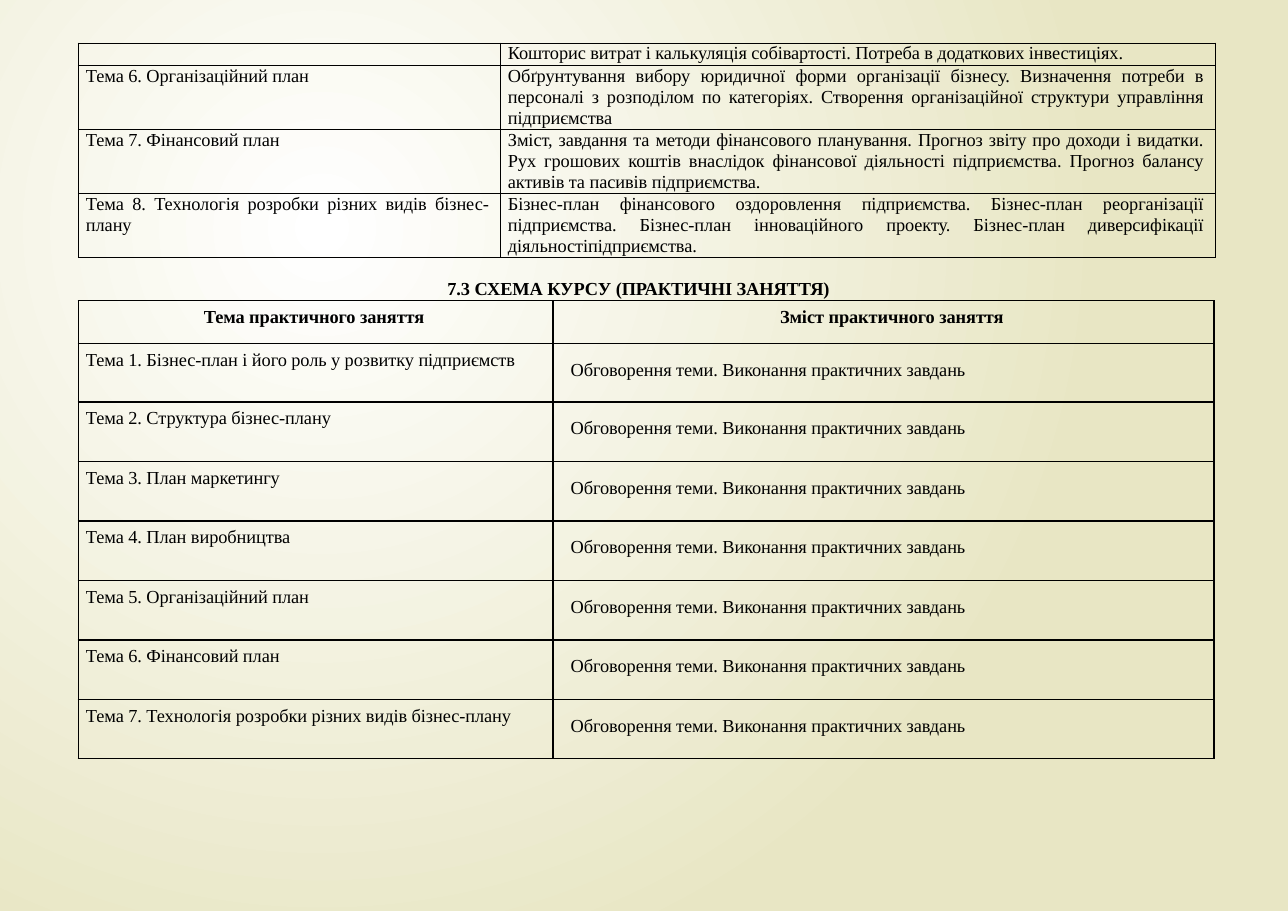
from lxml.etree import SubElement
from pptx import Presentation
from pptx.dml.color import RGBColor
from pptx.enum.text import MSO_ANCHOR, PP_ALIGN as Align
from pptx.oxml import parse_xml
from pptx.oxml.ns import nsdecls, qn
from pptx.util import Inches, Pt

COLORS = {"ink": "000000", "glow": "FFFFFF", "sand": "E8E6C4"}
FONT = {"name": "Times New Roman", "size": Pt(12)}
TRACKING = "-5"

LECTURES = [
    ("", "Кошторис витрат і калькуляція собівартості. Потреба в додаткових інвестиціях."),
    ("Тема 6. Організаційний план",
     "Обґрунтування вибору юридичної форми організації бізнесу. Визначення потреби в "
     "персоналі з розподілом по категоріях. Створення організаційної структури управління "
     "підприємства"),
    ("Тема 7. Фінансовий план",
     "Зміст, завдання та методи фінансового планування. Прогноз звіту про доходи і видатки. "
     "Рух грошових коштів внаслідок фінансової діяльності підприємства. Прогноз балансу "
     "активів та пасивів підприємства."),
    ("Тема 8. Технологія розробки різних видів бізнес-плану",
     "Бізнес-план фінансового оздоровлення підприємства. Бізнес-план реорганізації "
     "підприємства. Бізнес-план інноваційного проекту. Бізнес-план диверсифікації "
     "діяльностіпідприємства."),
]
HEADING = "7.3 СХЕМА КУРСУ (ПРАКТИЧНІ ЗАНЯТТЯ)"
PRACTICE_HEADER = ("Тема практичного заняття", "Зміст практичного заняття")
PRACTICE_TASK = "Обговорення теми. Виконання практичних завдань"
PRACTICE_TOPICS = [
    "Бізнес-план і його роль у розвитку підприємств",
    "Структура бізнес-плану",
    "План маркетингу",
    "План виробництва",
    "Організаційний план",
    "Фінансовий план",
    "Технологія розробки різних видів бізнес-плану",
]


def apply_format(target, values):
    for key, value in values.items():
        setattr(target, key, value)


def write(frame, text, indent=0, bold=False, **layout):
    paragraph = frame.paragraphs[0]
    apply_format(paragraph, layout)
    properties = paragraph._p.get_or_add_pPr()
    properties.set("marL", str(Inches(indent)))
    properties.set("indent", "0")
    if not text:
        SubElement(paragraph._p, qn("a:endParaRPr"), sz=str(int(FONT["size"].pt * 100)))
        return
    run = paragraph.add_run()
    run.text = text
    apply_format(run.font, {**FONT, "bold": bold})
    run.font.color.rgb = RGBColor.from_string(COLORS["ink"])
    run.font._element.set("spc", TRACKING)


def set_borders(cell, width):
    for side in ("lnL", "lnR", "lnT", "lnB"):
        cell._tc.get_or_add_tcPr().append(parse_xml(
            f'<a:{side} {nsdecls("a")} w="{Pt(width)}"><a:solidFill>'
            f'<a:srgbClr val="{COLORS["ink"]}"/></a:solidFill></a:{side}>'))


def add_grid(slide, box, widths, heights, border):
    left, top = box
    grid = slide.shapes.add_table(
        len(heights), len(widths), Inches(left), Inches(top),
        Inches(sum(widths)), Inches(sum(heights))).table
    apply_format(grid, {"first_row": False, "horz_banding": False})
    for column, width in zip(grid.columns, widths):
        column.width = Inches(width)
    for row, height in zip(grid.rows, heights):
        row.height = Inches(height)
    for cell in grid.iter_cells():
        set_borders(cell, border)
        cell.fill.background()
        apply_format(cell, dict.fromkeys(
            ("margin_left", "margin_right", "margin_top", "margin_bottom"), 0))
    return grid


def add_lectures(slide, box):
    grid = add_grid(slide, box, [3.83, 6.49], [0.2, 0.58, 0.58, 0.58], 0.5)
    for row, texts in enumerate(LECTURES):
        for column, text in enumerate(texts):
            cell = grid.cell(row, column)
            cell.margin_right = Inches(0.1)
            write(cell.text_frame, text, 0.07, alignment=Align.JUSTIFY,
                  line_spacing=Pt(13.8 if row else 13.3))


def add_heading(slide, box):
    title = slide.shapes.title
    apply_format(title, dict(zip(("left", "top", "width", "height"), map(Inches, box))))
    apply_format(title.text_frame, {
        "margin_left": 0, "margin_right": 0, "margin_top": Inches(0.01), "margin_bottom": 0,
        "word_wrap": True, "vertical_anchor": MSO_ANCHOR.TOP})
    write(title.text_frame, HEADING, 0.01, bold=True,
          alignment=Align.LEFT, line_spacing=1.0, space_before=Pt(1))


def add_practice(slide, box):
    heights = [0.39, 0.53] + [0.54] * (len(PRACTICE_TOPICS) - 1)
    grid = add_grid(slide, box, [4.31, 6], heights, 1)
    for cell in grid.iter_cells():
        cell.margin_top = Inches(0.06)
    topic_head, task_head = grid.rows[0].cells
    write(topic_head.text_frame, PRACTICE_HEADER[0], 1.14, bold=True)
    write(task_head.text_frame, PRACTICE_HEADER[1], 0.15, bold=True, alignment=Align.CENTER)
    for number, topic in enumerate(PRACTICE_TOPICS, 1):
        topic_cell, task_cell = grid.rows[number].cells
        write(topic_cell.text_frame, f"Тема {number}. {topic}", 0.07)
        task_cell.margin_top = Inches(0.15)
        write(task_cell.text_frame, PRACTICE_TASK, 0.16)


def set_background(slide):
    slide.element.cSld.insert(0, parse_xml(
        f'<p:bg {nsdecls("p", "a")}><p:bgPr><a:gradFill rotWithShape="1"><a:gsLst>'
        f'<a:gs pos="0"><a:srgbClr val="{COLORS["glow"]}"/></a:gs>'
        f'<a:gs pos="100000"><a:srgbClr val="{COLORS["sand"]}"/></a:gs></a:gsLst>'
        '<a:path path="circle"><a:fillToRect l="50000" t="50000" r="100000" b="100000"/>'
        '</a:path></a:gradFill><a:effectLst/></p:bgPr></p:bg>'))


def main():
    deck = Presentation()
    apply_format(deck, {"slide_width": Inches(11.69), "slide_height": Inches(8.27)})
    slide = deck.slides.add_slide(deck.slide_layouts[5])
    set_background(slide)
    add_lectures(slide, (0.71, 0.39))
    add_heading(slide, (4.05, 2.51, 3.61, 0.23))
    add_practice(slide, (0.71, 2.73))
    deck.save("out.pptx")


if __name__ == "__main__":
    main()
